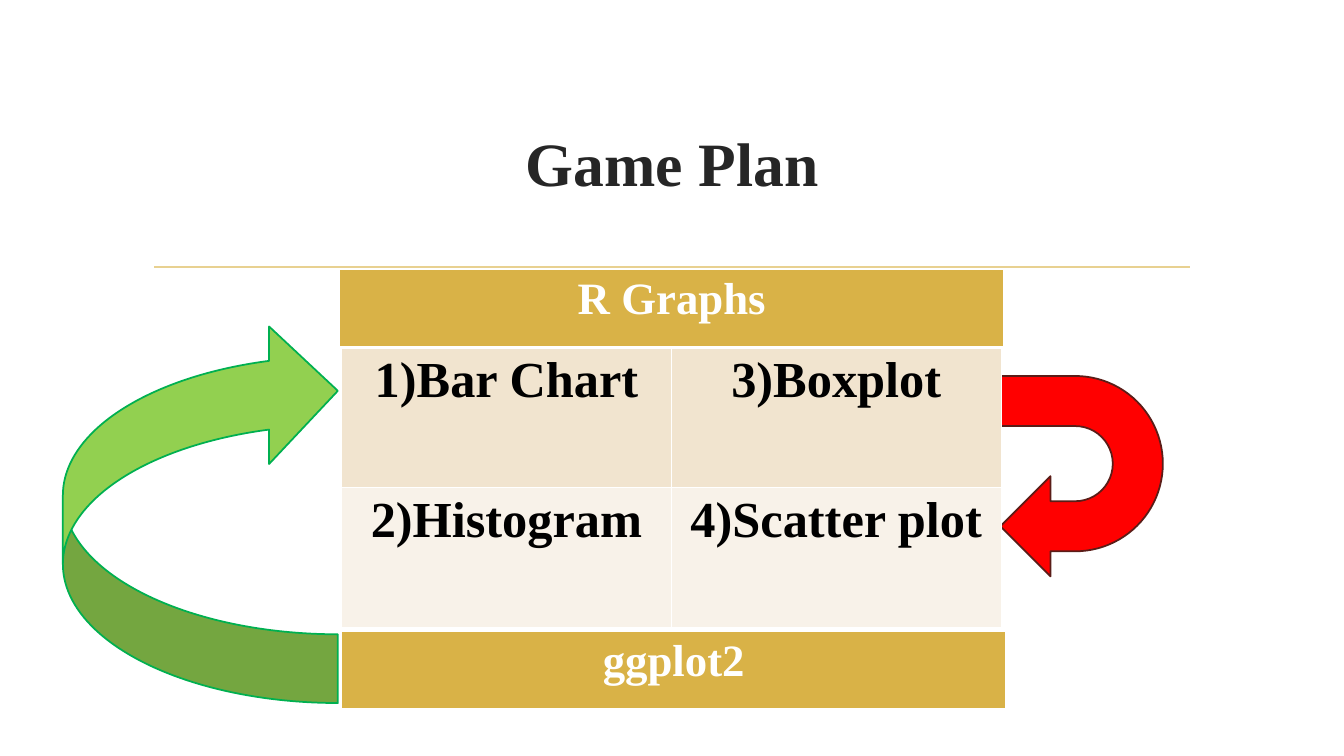
from dataclasses import dataclass

from lxml.etree import SubElement
from pptx import Presentation
from pptx.dml.color import RGBColor
from pptx.enum.shapes import MSO_CONNECTOR as Connector, MSO_SHAPE as Shape
from pptx.enum.text import MSO_ANCHOR as Anchor, PP_ALIGN as Align
from pptx.oxml.ns import qn
from pptx.util import Cm, Pt

COLORS = {
    "title": "262626", "rule": "E8D191", "gold": "D9B247",
    "sand": "F1E4CF", "cream": "F8F2E9", "white": "FFFFFF", "black": "000000",
    "green": "92D050", "green_line": "00B050", "red": "FF0000", "red_line": "5A1D18",
}
FONT = "Times New Roman"


@dataclass(frozen=True)
class Arrow:
    kind: Shape
    box: tuple[float, float, float, float]
    rotation: int
    fill: str
    line: str


@dataclass(frozen=True)
class Row:
    texts: tuple[str, ...]
    height: float
    fill: str
    color: str
    size: int
    bottom_border: float = 1


@dataclass(frozen=True)
class Grid:
    left: float
    top: float
    width: float
    rows: tuple[Row, ...]


def banner(text: str) -> Row:
    return Row((text,), 1.98, "gold", "white", 32, 3)


GREEN_ARROW = Arrow(Shape.CURVED_DOWN_ARROW, (0.25, 9.45, 9.6, 6.93), 270, "green", "green_line")
RED_ARROW = Arrow(Shape.U_TURN_ARROW, (24.05, 9.27, 5.05, 5.46), 90, "red", "red_line")
GGPLOT_BANNER = Grid(8.61, 15.9, 16.74, (banner("ggplot2"),))
GRAPHS_BANNER = Grid(8.56, 6.78, 16.74, (banner("R Graphs"),))
GRAPHS_GRID = Grid(8.61, 7.57, 16.62, (
    Row(("", ""), 1.19, "gold", "white", 18, 3),
    Row(("1)Bar Chart", "3)Boxplot"), 3.53, "sand", "black", 36),
    Row(("2)Histogram", "4)Scatter plot"), 3.53, "cream", "black", 36),
))


def rgb(name: str) -> RGBColor:
    return RGBColor.from_string(COLORS[name])


def write_text(frame, text: str, *, size: int, color: str) -> None:
    paragraph = frame.paragraphs[0]
    paragraph.alignment = Align.CENTER
    run = paragraph.add_run()
    run.text = text
    run.font.name, run.font.size, run.font.bold = FONT, Pt(size), True
    run.font.color.rgb = rgb(color)


def set_borders(cell, bottom: float) -> None:
    properties = cell._tc.get_or_add_tcPr()
    for side, width in (("L", 1), ("R", 1), ("T", 1), ("B", bottom)):
        line = SubElement(properties, qn(f"a:ln{side}"), w=str(Pt(width)))
        fill = SubElement(line, qn("a:solidFill"))
        SubElement(fill, qn("a:srgbClr"), val=COLORS["white"])


def draw_title(slide, text: str) -> None:
    title = slide.shapes.title
    title.left, title.top, title.width, title.height = Cm(3.61), Cm(2.26), Cm(26.67), Cm(3.63)
    title.text_frame.vertical_anchor = Anchor.MIDDLE
    write_text(title.text_frame, text, size=44, color="title")


def draw_rule(slide) -> None:
    rule = slide.shapes.add_connector(Connector.STRAIGHT, Cm(3.89), Cm(6.73), Cm(30), Cm(6.73))
    rule.line.color.rgb = rgb("rule")
    rule.line.width = Pt(1.25)
    SubElement(rule._element.spPr, qn("a:effectLst"))


def draw_arrow(slide, arrow: Arrow) -> None:
    shape = slide.shapes.add_shape(arrow.kind, *map(Cm, arrow.box))
    shape.rotation = arrow.rotation
    shape.shadow.inherit = False
    shape.fill.solid()
    shape.fill.fore_color.rgb = rgb(arrow.fill)
    shape.line.color.rgb = rgb(arrow.line)
    shape.line.width = Pt(1.25)


def draw_grid(slide, grid: Grid) -> None:
    height = sum(row.height for row in grid.rows)
    table = slide.shapes.add_table(
        len(grid.rows), len(grid.rows[0].texts),
        Cm(grid.left), Cm(grid.top), Cm(grid.width), Cm(height),
    ).table
    table.horz_banding = False
    for row_index, row in enumerate(grid.rows):
        table.rows[row_index].height = Cm(row.height)
        for column_index, text in enumerate(row.texts):
            cell = table.cell(row_index, column_index)
            set_borders(cell, row.bottom_border)
            cell.fill.solid()
            cell.fill.fore_color.rgb = rgb(row.fill)
            if text:
                write_text(cell.text_frame, text, size=row.size, color=row.color)


def main() -> None:
    presentation = Presentation()
    presentation.slide_width, presentation.slide_height = Cm(33.87), Cm(19.05)
    slide = presentation.slides.add_slide(presentation.slide_layouts[5])

    # Heading
    draw_rule(slide)
    draw_title(slide, "Game Plan")

    # Arrows and tables, from back to front
    draw_arrow(slide, GREEN_ARROW)
    draw_grid(slide, GGPLOT_BANNER)
    draw_arrow(slide, RED_ARROW)
    draw_grid(slide, GRAPHS_GRID)
    draw_grid(slide, GRAPHS_BANNER)

    presentation.save("out.pptx")


if __name__ == "__main__":
    main()
